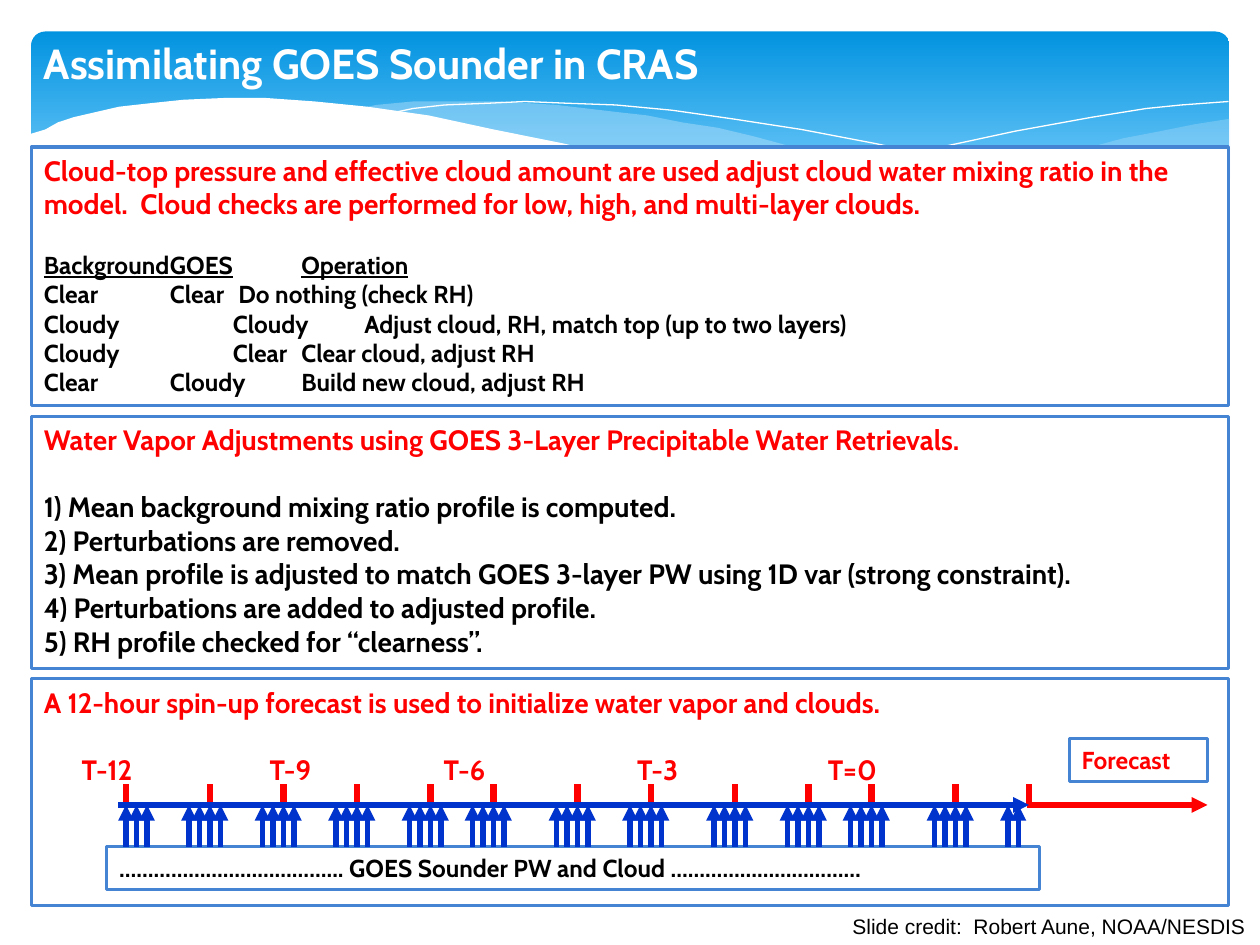
from dataclasses import dataclass

from lxml.etree import SubElement
from pptx import Presentation
from pptx.dml.color import RGBColor as Color
from pptx.enum.shapes import MSO_CONNECTOR as Connector, MSO_SHAPE as Preset
from pptx.enum.text import MSO_ANCHOR as Anchor, PP_ALIGN as Align
from pptx.oxml.ns import qn
from pptx.util import Pt


@dataclass(frozen=True)
class Theme:
    font: str = "Cabin"
    credit_font: str = "Arial"
    white: str = "FFFFFF"
    black: str = "000000"
    red: str = "FF0000"
    blue: str = "0033CC"
    border: str = "4584D3"
    wave: str = "C6E7FC"
    sky_top: str = "0293E0"
    sky_bottom: str = "83D3FE"
    title: int = 24
    heading: int = 16
    body: int = 14
    credit: int = 12


THEME = Theme()

# Banner outlines, in points
RIGHT_WAVE = [
    (702, 68), (683, 71), (663, 75), (642, 79), (620, 85), (580, 94), (542, 103),
    (508, 109), (476, 115), (508, 119), (545, 122), (586, 124), (621, 122),
    (652, 117), (678, 111), (703, 102), (703, 68)]
MIDDLE_WAVE = [
    (643, 120), (603, 114), (558, 107), (508, 96), (453, 84), (431, 78), (410, 73),
    (390, 70), (370, 66), (352, 64), (318, 60), (287, 57.6), (260, 57.6), (236, 58),
    (215, 60), (206, 62), (233, 65), (261, 70), (291, 76), (323, 83.5), (382, 97),
    (433, 108), (479, 116), (520, 121), (565, 124), (596, 124.5), (624, 122)]
FALLING_CURVE = [
    (222.5, 65), (236, 62), (254, 60.5), (279, 59), (299.5, 58.5), (324, 59),
    (352, 60.5), (384, 63), (419, 68), (458, 74), (500, 82), (547, 92),
    (598, 104), (653, 119.5)]
RISING_CURVE = [
    (441, 109), (470, 101.5), (500, 93.5), (538.5, 84), (580, 75), (623.5, 67),
    (655, 62), (675, 60), (702, 57.6)]
WHITE_HILL = [
    (703.5, 101.5), (670, 113), (630, 120), (592.5, 123), (548, 122), (495, 117),
    (434, 107), (381, 96), (322, 82), (281.5, 73.5), (245, 66), (210, 61), (180, 58),
    (152, 56), (127.5, 56), (105, 57), (86, 59), (68, 61), (55, 64), (42.5, 67),
    (33, 70.5), (26, 73.5), (16.5, 77), (16.5, 161), (703.5, 161)]

# Timeline: all x positions are multiples of one step
STEP = 6
AXIS_Y, TICK_TOP, SOUNDER_TOP = 460, 448, 484
ARROW_GROUPS = [(12, 3), *((start, 4) for start in
                (18, 25, 32, 39, 45, 53, 60, 68, 75, 81, 89)), (96, 2)]
TICKS = [12] + [start + 2 for start, _ in ARROW_GROUPS[1:]]
TIME_LABELS = {21.6: "T-12", 129: "T-9", 228.5: "T-6", 339: "T-3", 448: "T=0"}


def rgb(value):
    return Color.from_string(value)


def add_wave(page, points, fill=None, opacity=100):
    """Filled outline, or an open white curve when no fill is given."""
    builder = page.shapes.build_freeform(*points[0], scale=Pt(1))
    builder.add_line_segments(points[1:], close=fill is not None)
    wave = builder.convert_to_shape()
    wave.shadow.inherit = False
    if fill is None:
        wave.fill.background()
        wave.line.color.rgb = rgb(THEME.white)
        wave.line.width = Pt(0)
        return
    wave.line.fill.background()
    wave.fill.solid()
    wave.fill.fore_color.rgb = rgb(fill)
    color = wave.fill._xPr.find(f".//{qn('a:srgbClr')}")
    SubElement(color, qn("a:alpha"), val=str(opacity * 1000))


def add_banner(page):
    banner = page.shapes.add_shape(Preset.ROUNDED_RECTANGLE, Pt(18), Pt(18), Pt(684.5), Pt(112))
    banner.adjustments[0] = 0.07
    banner.shadow.inherit = False
    banner.line.fill.background()
    banner.fill.gradient()
    banner.fill.gradient_angle = 270
    stops = [(0, THEME.sky_top), (0.9, THEME.sky_bottom)]
    for stop, (position, color) in zip(banner.fill.gradient_stops, stops):
        stop.position = position
        stop.color.rgb = rgb(color)
    add_wave(page, RIGHT_WAVE, THEME.wave, 29)
    add_wave(page, MIDDLE_WAVE, THEME.wave, 40)
    add_wave(page, FALLING_CURVE)
    add_wave(page, RISING_CURVE)
    add_wave(page, WHITE_HILL, THEME.white)


def prepare_text(box):
    frame = box.text_frame
    frame.word_wrap = True
    frame.vertical_anchor = Anchor.TOP
    return box


def add_label(page, left, top, width, height):
    return prepare_text(page.shapes.add_textbox(Pt(left), Pt(top), Pt(width), Pt(height)))


def add_panel(page, left, top, width, height):
    panel = page.shapes.add_shape(Preset.RECTANGLE, Pt(left), Pt(top), Pt(width), Pt(height))
    panel.shadow.inherit = False
    panel.fill.solid()
    panel.fill.fore_color.rgb = rgb(THEME.white)
    panel.line.color.rgb = rgb(THEME.border)
    panel.line.width = Pt(1.75)
    return prepare_text(panel)


def write(box, text, size, color, before=0, underlined=(), font=THEME.font, bold=True):
    """Write one paragraph; text is a string or a list of spans."""
    frame = box.text_frame
    para = frame.add_paragraph() if frame.text else frame.paragraphs[0]
    para.alignment = Align.LEFT
    para.space_before = Pt(before)
    for words in [text] if isinstance(text, str) else text:
        span = para.add_run()
        span.text = words
        formats = {"name": font, "size": Pt(size), "bold": bold,
                   "underline": words in underlined}
        for name, value in formats.items():
            setattr(span.font, name, value)
        span.font.color.rgb = rgb(color)
    return para


def add_line(page, start, end, color, width, arrow=False):
    line = page.shapes.add_connector(Connector.STRAIGHT, *map(Pt, start + end))
    line.line.color.rgb = rgb(color)
    line.line.width = Pt(width)
    if arrow:
        SubElement(line.line._get_or_add_ln(), qn("a:tailEnd"), type="triangle")
    SubElement(line._element.spPr, qn("a:effectLst"))


def add_timeline(page):
    sounder = add_panel(page, 61, SOUNDER_TOP, 533, 24.5)
    write(sounder, "………………………………... GOES Sounder PW and Cloud ……………………………",
          THEME.body, THEME.black)
    for start, count in ARROW_GROUPS:
        for x in range(start * STEP, (start + count) * STEP, STEP):
            add_line(page, (x, SOUNDER_TOP), (x, AXIS_Y), THEME.blue, 3, arrow=True)
    add_line(page, (587, AXIS_Y), (690, AXIS_Y), THEME.red, 3, arrow=True)
    for tick in TICKS:
        add_line(page, (tick * STEP, AXIS_Y), (tick * STEP, TICK_TOP), THEME.red, 3.5)
    add_line(page, (67.5, AXIS_Y), (588, AXIS_Y), THEME.blue, 3, arrow=True)
    forecast = add_panel(page, 611, 422, 79, 24.5)
    write(forecast, "Forecast", THEME.body, THEME.red)


def main():
    deck = Presentation()
    deck.slide_width, deck.slide_height = Pt(720), Pt(540)
    page = deck.slides.add_slide(deck.slide_layouts[6])

    # Banner and title
    add_banner(page)
    title = add_label(page, 18, 18, 684, 36)
    write(title, "Assimilating GOES Sounder in CRAS", THEME.title, THEME.white)

    # Cloud checks
    clouds = add_panel(page, 18, 84, 684, 148)
    write(clouds, "Cloud-top pressure and effective cloud amount are used adjust cloud water mixing "
          "ratio in the model.  Cloud checks are performed for low, high, and multi-layer clouds.",
          THEME.heading, THEME.red)
    columns = ("Background", "GOES", "Operation")
    write(clouds, ["Background", "\t", "GOES", "\t ", "Operation"], THEME.body, THEME.black,
          before=16.8, underlined=columns)
    for background, goes, operation in [
            ("Clear", "Clear", "Do nothing (check RH)"),
            ("Cloudy", "Cloudy", "Adjust cloud, RH, match top (up to two layers)"),
            ("Cloudy", "Clear", "Clear cloud, adjust RH"),
            ("Clear", "Cloudy", "Build new cloud, adjust RH")]:
        write(clouds, f"{background}\t\t{goes}\t {operation}", THEME.body, THEME.black)

    # Water vapor steps
    vapor = add_panel(page, 18, 238, 684, 144)
    write(vapor, "Water Vapor Adjustments using GOES 3-Layer Precipitable Water Retrievals.",
          THEME.heading, THEME.red)
    steps = ["Mean background mixing ratio profile is computed.",
             "Perturbations are removed.",
             "Mean profile is adjusted to match GOES 3-layer PW using 1D var (strong constraint).",
             "Perturbations are added to adjusted profile.",
             "RH profile checked for “clearness”."]
    for number, step in enumerate(steps, 1):
        write(vapor, f"{number}) {step}", THEME.heading, THEME.black,
              before=19.2 if number == 1 else 0)

    # Spin-up forecast with time labels on tab stops
    spin_up = add_panel(page, 18, 388, 684, 129.5)
    write(spin_up, "A 12-hour spin-up forecast is used to initialize water vapor and clouds.",
          THEME.heading, THEME.red)
    times = write(spin_up, "".join(f"\t{label}" for label in TIME_LABELS.values()),
                  THEME.heading, THEME.red, before=19.2)
    stops = SubElement(times._p.get_or_add_pPr(), qn("a:tabLst"))
    for position in TIME_LABELS:
        SubElement(stops, qn("a:tab"), pos=str(Pt(position)), algn="l")
    add_timeline(page)

    # Credit
    credit = add_label(page, 480, 518.5, 240, 21.5)
    write(credit, "Slide credit:  Robert Aune, NOAA/NESDIS", THEME.credit, THEME.black,
          font=THEME.credit_font, bold=False)

    deck.save("out.pptx")


if __name__ == "__main__":
    main()
